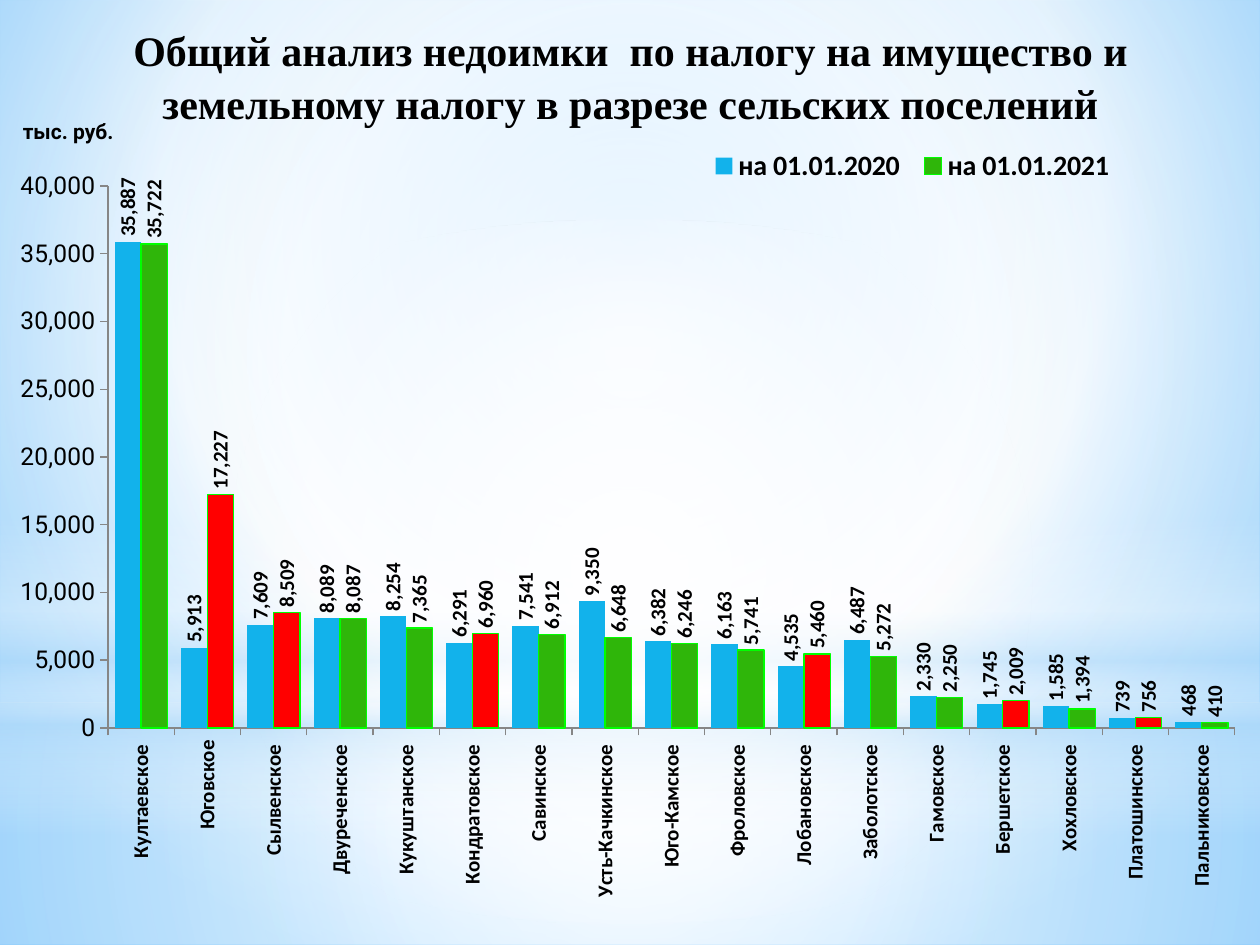
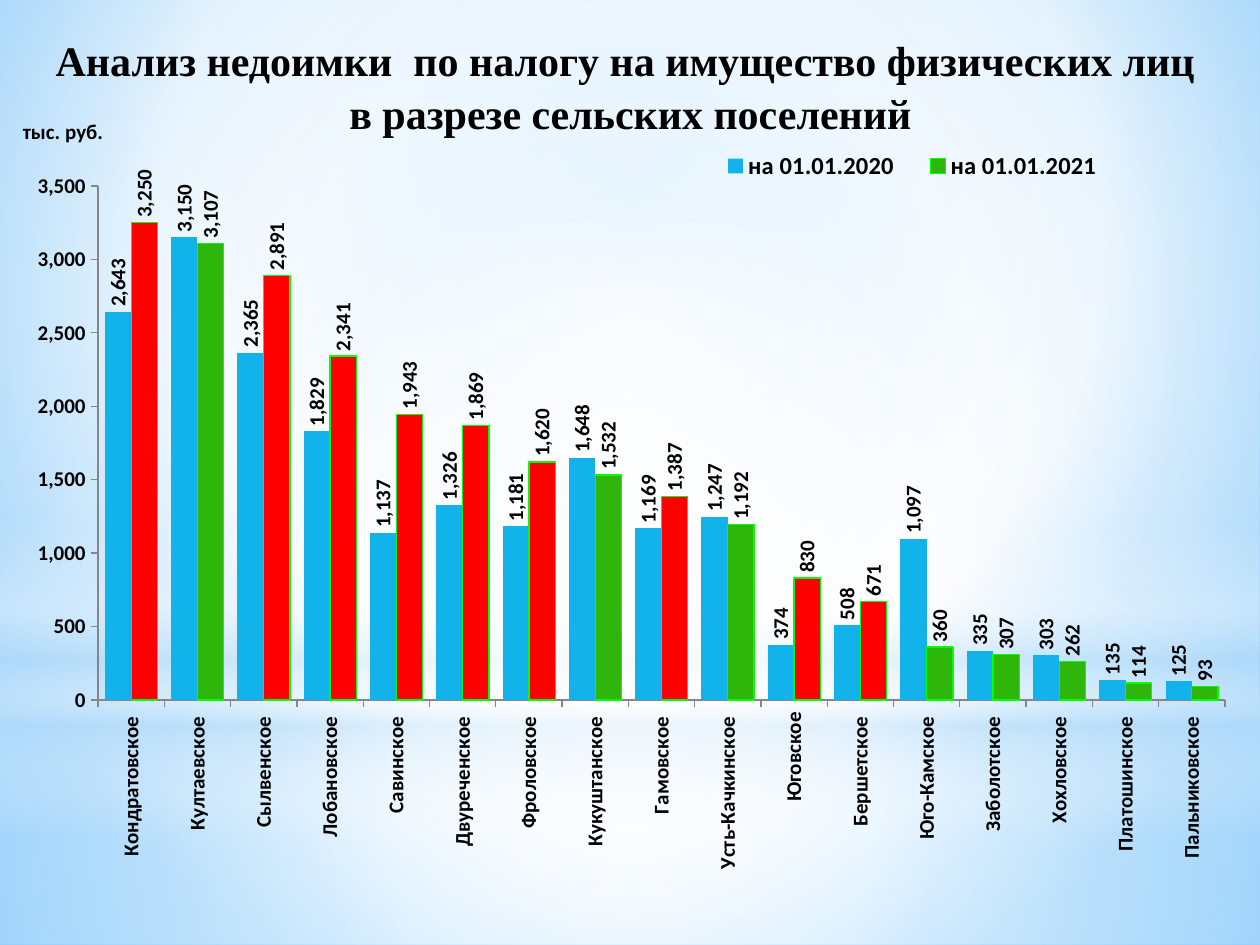
from lxml import etree
from pptx import Presentation
from pptx.chart.data import CategoryChartData
from pptx.dml.color import RGBColor
from pptx.enum.chart import XL_CHART_TYPE, XL_LABEL_POSITION, XL_LEGEND_POSITION, XL_TICK_MARK
from pptx.enum.shapes import MSO_SHAPE
from pptx.enum.text import MSO_ANCHOR, MSO_AUTO_SIZE, PP_ALIGN
from pptx.oxml.ns import nsdecls, qn
from pptx.util import Pt

RECTANGLE, OVAL = MSO_SHAPE.RECTANGLE, MSO_SHAPE.OVAL
COLUMNS = XL_CHART_TYPE.COLUMN_CLUSTERED
OUTSIDE_END = XL_LABEL_POSITION.OUTSIDE_END
LEGEND_BOTTOM = XL_LEGEND_POSITION.BOTTOM
TICK_OUTSIDE, TICK_NONE = XL_TICK_MARK.OUTSIDE, XL_TICK_MARK.NONE
TOP, CENTER, NO_AUTOFIT = MSO_ANCHOR.TOP, PP_ALIGN.CENTER, MSO_AUTO_SIZE.NONE

EMU_PER_PX = 914400 / 126
SLIDE_SIZE = (1260, 945)
TITLE_ONLY = 5

# Shared palette and backdrop: gradient stops are (position, colour, opacity)
BLACK, AXIS_GRAY = "000000", "868686"
BLUE, GREEN, RED, LIME = "12B2EB", "2FB60A", "FF0000", "00FF00"
WHITE, PALE = "FFFFFF", "B4DCFA"
MIDDLE = (50, 50, 50, 50)
BACKGROUND = [(0, "9ED5FF", 100), (60, WHITE, 100), (100, "5BB9FF", 100)]
BANDS = [
    (RECTANGLE, (0, 703, 1260, 242), [(0, WHITE, 91), (37, WHITE, 76), (100, PALE, 79)], MIDDLE),
    (RECTANGLE, (0, 0, 1260, 703), [(0, WHITE, 89), (48, WHITE, 62), (100, PALE, 79)], MIDDLE),
    (RECTANGLE, (0, 519, 1260, 315), [(0, WHITE, 0), (29, WHITE, 30), (45, PALE, 40),
                                      (55, WHITE, 26), (65, PALE, 60), (100, WHITE, 0)], None),
    (OVAL, (0, 220, 1260, 703), [(0, WHITE, 100), (56, WHITE, 0)], MIDDLE),
]

# Shared text formats and chart geometry
TITLE_FONT = {"name": "Times New Roman", "size": Pt(24), "bold": True}
BOLD_12 = {"name": "Calibri", "size": Pt(12), "bold": True}
ROBOTO_12 = {**BOLD_12, "name": "Roboto"}
ROBOTO_14 = {"name": "Roboto", "size": Pt(14), "bold": False}
CHART_BOX = (15, 76, 1230, 853)
LEGEND_BOX = (700, 149, 425, 34)
UNIT_PLACE = (19, 113)
UNIT = "тыс. руб."
NUMBERS = "#,##0"
SERIES = ("на 01.01.2020", "на 01.01.2021")

# Arrears by settlement: name, first date, second date
TOTAL_ARREARS = [
    ("Култаевское ", 35887, 35722), ("Юговское", 5913, 17227),
    ("Сылвенское ", 7609, 8509), ("Двуреченское ", 8089, 8087),
    ("Кукуштанское ", 8254, 7365), ("Кондратовское ", 6291, 6960),
    ("Савинское ", 7541, 6912), ("Усть-Качкинское ", 9350, 6648),
    ("Юго-Камское ", 6382, 6246), ("Фроловское ", 6163, 5741),
    ("Лобановское ", 4535, 5460), ("Заболотское ", 6487, 5272),
    ("Гамовское ", 2330, 2250), ("Бершетское ", 1745, 2009),
    ("Хохловское ", 1585, 1394), ("Платошинское ", 739, 756),
    ("Пальниковское ", 468, 410),
]
PROPERTY_ARREARS = [
    ("Кондратовское ", 2643, 3250), ("Култаевское ", 3150, 3107),
    ("Сылвенское ", 2365, 2891), ("Лобановское ", 1829, 2341),
    ("Савинское ", 1137, 1943), ("Двуреченское ", 1326, 1869),
    ("Фроловское ", 1181, 1620), ("Кукуштанское ", 1648, 1532),
    ("Гамовское ", 1169, 1387), ("Усть-Качкинское ", 1247, 1192),
    ("Юговское", 374, 830), ("Бершетское ", 508, 671),
    ("Юго-Камское ", 1097, 360), ("Заболотское ", 335, 307),
    ("Хохловское ", 303, 262), ("Платошинское ", 135, 114),
    ("Пальниковское ", 125, 93),
]


def px(*lengths):
    return [round(length * EMU_PER_PX) for length in lengths]


def rgb(value):
    return RGBColor.from_string(value)


def apply(target, values):
    for name, value in values.items():
        setattr(target, name, value)


def style_font(font, values, color=BLACK):
    apply(font, values)
    font.color.rgb = rgb(color)


def rotate_text(element, degrees):
    body = element.find(".//" + qn("a:bodyPr"))
    body.set("rot", str(degrees * 60000))
    body.set("vert", "horz")


def set_gradient(properties, stops, focus):
    """Replace a solid fill by a circular gradient, or a vertical one without focus."""
    stop_xml = "".join(
        f'<a:gs pos="{position * 1000}"><a:srgbClr val="{color}">'
        f'<a:alpha val="{opacity * 1000}"/></a:srgbClr></a:gs>'
        for position, color, opacity in stops)
    if focus:
        sides = " ".join(f'{side}="{value * 1000}"' for side, value in zip("ltrb", focus))
        direction = f'<a:path path="circle"><a:fillToRect {sides}/></a:path>'
    else:
        direction = '<a:lin ang="5400000" scaled="0"/>'
    gradient = etree.fromstring(
        f'<a:gradFill {nsdecls("a")} rotWithShape="1"><a:gsLst>{stop_xml}</a:gsLst>'
        f'{direction}</a:gradFill>')
    solid = properties.find(qn("a:solidFill"))
    properties.replace(solid, gradient)


def set_layout(parent, index, box, target=None):
    """Place a chart part at a box given in slide px."""
    for old_layout in parent.findall(qn("c:layout")):
        parent.remove(old_layout)
    left, top, width, height = CHART_BOX
    fractions = ((box[0] - left) / width, (box[1] - top) / height,
                 *(length / whole for length, whole in zip(box[2:], (width, height))))
    settings = [("layoutTarget", target)] if target else []
    settings += [("xMode", "edge"), ("yMode", "edge")]
    settings += [(name, f"{value:.4f}") for name, value in zip("xywh", fractions)]
    layout = etree.Element(qn("c:layout"))
    manual = etree.SubElement(layout, qn("c:manualLayout"))
    for name, value in settings:
        etree.SubElement(manual, qn("c:" + name)).set("val", value)
    parent.insert(index, layout)


class Deck:
    def __init__(self):
        self.presentation = Presentation()
        apply(self.presentation, dict(zip(("slide_width", "slide_height"), px(*SLIDE_SIZE))))
        self.slide = None

    def new_slide(self):
        layout = self.presentation.slide_layouts[TITLE_ONLY]
        self.slide = self.presentation.slides.add_slide(layout)

    def backdrop(self):
        """Draw the background and bands, and keep them on the master."""
        master = self.presentation.slide_master
        master.background.fill.solid()
        set_gradient(master.element.find(".//" + qn("p:bgPr")), BACKGROUND, (20, 10, 20, 60))
        for index, band in enumerate(BANDS):
            shape = self.band(*band)
            master.shapes.element.insert(2 + index, shape.element)

    def band(self, kind, box, stops, focus):
        shape = self.slide.shapes.add_shape(kind, *px(*box))
        shape.shadow.inherit = False
        shape.line.fill.background()
        shape.fill.solid()
        set_gradient(shape.element.spPr, stops, focus)
        return shape

    def title(self, text, top):
        title = self.slide.shapes.title
        apply(title, dict(zip(("left", "top", "width", "height"), px(25, top, 1211, 79))))
        frame = title.text_frame
        frame.text = text
        apply(frame, {"word_wrap": True, "auto_size": NO_AUTOFIT, "vertical_anchor": TOP})
        paragraph = frame.paragraphs[0]
        apply(paragraph, {"alignment": CENTER, "line_spacing": 1.05})
        for run in paragraph.runs:
            style_font(run.font, TITLE_FONT)

    def chart(self, rows, plot_box, maximum, step, value_font, unit_font, legend_size):
        names, before, after = zip(*rows)
        data = CategoryChartData(number_format=NUMBERS)
        data.categories = names
        for series_name, values in zip(SERIES, (before, after)):
            data.add_series(series_name, values)
        chart = self.slide.shapes.add_chart(COLUMNS, *px(*CHART_BOX), data).chart
        apply(chart, {"has_title": False, "has_legend": True})
        style_font(chart.font, BOLD_12)
        self.columns(chart.plots[0], before, after)
        self.axes(chart, maximum, step, value_font, unit_font)

        legend = chart.legend
        apply(legend, {"position": LEGEND_BOTTOM, "include_in_layout": False})
        style_font(legend.font, {**BOLD_12, "size": Pt(legend_size)})
        set_layout(legend._element, 1, LEGEND_BOX)
        set_layout(chart._chartSpace.chart.plotArea, 0, plot_box, "inner")

    def columns(self, plot, before, after):
        apply(plot, {"gap_width": 52, "overlap": 0, "vary_by_categories": False})
        for series, color in zip(plot.series, (BLUE, GREEN)):
            self.column_format(series.format, color, outlined=color == GREEN)
            labels = series.data_labels
            apply(labels, {"show_value": True, "position": OUTSIDE_END,
                           "number_format": NUMBERS, "number_format_is_linked": False})
            style_font(labels.font, BOLD_12)
            rotate_text(labels._element, -90)
        # Growing arrears stand out in red
        for index, (old, new) in enumerate(zip(before, after)):
            if new > old:
                point = plot.series[1].points[index]
                self.column_format(point.format, RED, outlined=True)

    def column_format(self, chart_format, color, outlined):
        chart_format.fill.solid()
        chart_format.fill.fore_color.rgb = rgb(color)
        if outlined:
            chart_format.line.color.rgb = rgb(LIME)
            chart_format.line.width = Pt(0.75)

    def axes(self, chart, maximum, step, value_font, unit_font):
        for axis, font in ((chart.category_axis, BOLD_12), (chart.value_axis, value_font)):
            apply(axis, {"has_major_gridlines": False, "major_tick_mark": TICK_OUTSIDE,
                         "minor_tick_mark": TICK_NONE})
            axis.format.line.color.rgb = rgb(AXIS_GRAY)
            style_font(axis.tick_labels.font, font)
        rotate_text(chart.category_axis._element, -90)

        value_axis = chart.value_axis
        apply(value_axis, {"minimum_scale": 0, "maximum_scale": maximum, "major_unit": step})
        apply(value_axis.tick_labels, {"number_format": NUMBERS, "number_format_is_linked": False})
        unit = value_axis.axis_title
        unit.text_frame.text = UNIT
        style_font(unit.text_frame.paragraphs[0].runs[0].font, unit_font)
        rotate_text(unit._element, 0)
        set_layout(unit._element, 1, UNIT_PLACE)


def main():
    deck = Deck()

    # Total arrears
    deck.new_slide()
    deck.backdrop()
    deck.title("Общий анализ недоимки  по налогу на имущество и земельному налогу "
               "в разрезе сельских поселений", 16)
    deck.chart(TOTAL_ARREARS, (108, 186, 1127, 542), 40000, 5000, ROBOTO_14, ROBOTO_12, 16)

    # Arrears on personal property tax
    deck.new_slide()
    deck.title("Анализ недоимки  по налогу на имущество физических лиц \v"
               "в разрезе сельских поселений", 26)
    deck.chart(PROPERTY_ARREARS, (98, 186, 1127, 514), 3500, 500, BOLD_12, BOLD_12, 14)

    deck.presentation.save("out.pptx")


if __name__ == "__main__":
    main()
